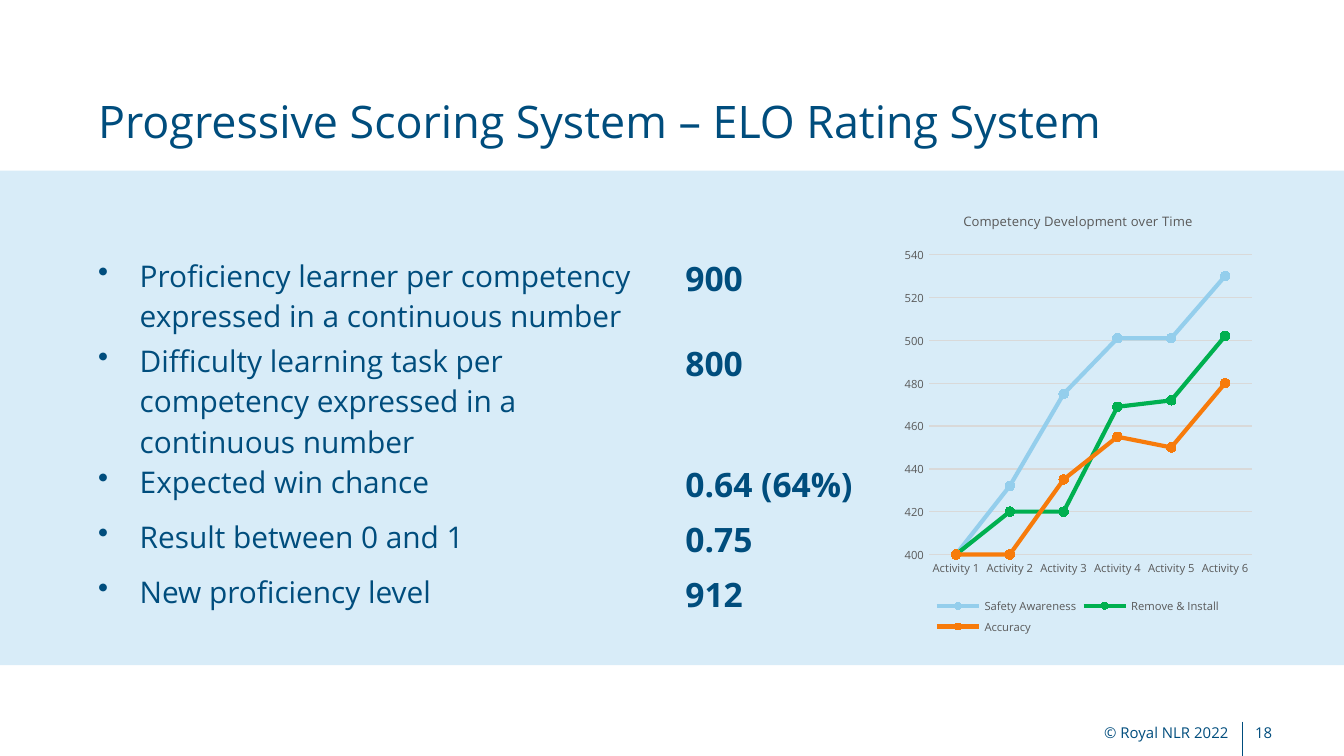
from dataclasses import dataclass

from lxml.etree import SubElement
from pptx import Presentation
from pptx.chart.data import CategoryChartData
from pptx.dml.color import RGBColor
from pptx.enum.chart import XL_CHART_TYPE as Chart, XL_LEGEND_POSITION as Legend
from pptx.enum.chart import XL_MARKER_STYLE as Marker, XL_TICK_MARK as Tick
from pptx.enum.shapes import MSO_CONNECTOR as Connector, MSO_SHAPE as Shape
from pptx.enum.text import MSO_ANCHOR as Anchor, MSO_AUTO_SIZE as AutoSize, PP_ALIGN as Align
from pptx.oxml import parse_xml
from pptx.oxml.ns import nsdecls, qn
from pptx.util import Emu, Pt


@dataclass(frozen=True)
class Theme:
    font: str = "Open Sans"
    navy: str = "004D7D"
    band: str = "D8ECF8"
    grey: str = "595959"
    grid: str = "D9D9D9"
    title: int = 24
    body: int = 16
    value: int = 18
    footer: int = 8
    chart_title: int = 7
    chart: int = 6


THEME = Theme()
PX_PER_INCH = 200
NO_TABLE_STYLE = "{2D5ABB26-0587-4C30-8999-92F81FD0307C}"

ROWS = [
    ("Proficiency learner per competency expressed in a continuous number", "900"),
    ("Difficulty learning task per competency expressed in a continuous number", "800"),
    ("Expected win chance", "0.64 (64%)"),
    ("Result between 0 and 1", "0.75"),
    ("New proficiency level", "912"),
]
SERIES = [
    ("Safety Awareness", "94CEEC", (400, 432, 475, 501, 501, 530)),
    ("Remove & Install", "00B050", (400, 420, 420, 469, 472, 502)),
    ("Accuracy", "F77B0B", (400, 400, 435, 455, 450, 480)),
]


def px(n):
    return Emu(n * 914400 // PX_PER_INCH)


def box(*lengths):
    return [px(n) for n in lengths]


def rgb(color):
    return RGBColor.from_string(color)


def set_font(font, size, color, bold=False):
    font.name, font.size, font.bold = THEME.font, Pt(size), bold
    font.color.rgb = rgb(color)


def write(tf, text, size, color=THEME.navy, bold=False, align=Align.LEFT, anchor=None, bullet=False):
    tf.word_wrap = True
    if anchor is not None:
        tf.vertical_anchor = anchor
    p = tf.paragraphs[0]
    p.alignment = align
    if bullet:
        pPr = p._p.get_or_add_pPr()
        pPr.set("marL", str(px(62)))
        pPr.set("indent", str(-px(62)))
        SubElement(pPr, qn("a:buChar")).set("char", "•")
    r = p.add_run()
    r.text = text
    set_font(r.font, size, color, bold)
    return r


def add_band(slide):
    sp = slide.shapes.add_shape(Shape.RECTANGLE, *box(0, 254, 2000, 736))
    sp.shadow.inherit = False
    sp.fill.solid()
    sp.fill.fore_color.rgb = rgb(THEME.band)
    sp.line.fill.background()


def add_divider(slide):
    line = slide.shapes.add_connector(Connector.STRAIGHT, *box(1848, 1074, 1848, 1125))
    line.line.color.rgb = rgb(THEME.navy)
    line.line.width = Pt(0.25)
    SubElement(line._element.spPr, qn("a:effectLst"))


def add_footer(slide, text, left, width, align):
    tb = slide.shapes.add_textbox(*box(left, 1060, width, 60))
    write(tb.text_frame, text, THEME.footer, align=align, anchor=Anchor.MIDDLE)


def set_title(slide, text):
    title = slide.shapes.title
    title.left, title.top, title.width, title.height = box(126, 130, 1770, 100)
    write(title.text_frame, text, THEME.title, anchor=Anchor.MIDDLE)
    title.text_frame.auto_size = AutoSize.NONE


def add_score_table(slide):
    frame = slide.shapes.add_table(len(ROWS), 2, *box(126, 370, 1174, 82 * len(ROWS)))
    table = frame.table
    table.first_row = table.horz_banding = False
    table._tbl.tblPr.find(qn("a:tableStyleId")).text = NO_TABLE_STYLE
    for column, width in zip(table.columns, (874, 300)):
        column.width = px(width)
    for i, (label, value) in enumerate(ROWS):
        for cell in table.rows[i].cells:
            cell.fill.background()
        write(table.cell(i, 0).text_frame, label, THEME.body, bullet=True)
        write(table.cell(i, 1).text_frame, value, THEME.value, bold=True)


def place_plot(chart, x, y, w, h):
    area = chart._chartSpace.chart.plotArea
    for old in area.findall(qn("c:layout")):
        area.remove(old)
    area.insert(0, parse_xml(
        f'<c:layout {nsdecls("c")}><c:manualLayout><c:layoutTarget val="inner"/>'
        f'<c:xMode val="edge"/><c:yMode val="edge"/><c:x val="{x}"/><c:y val="{y}"/>'
        f'<c:w val="{w}"/><c:h val="{h}"/></c:manualLayout></c:layout>'))


def style_axes(chart):
    for axis in (chart.category_axis, chart.value_axis):
        axis.major_tick_mark = axis.minor_tick_mark = Tick.NONE
        set_font(axis.tick_labels.font, THEME.chart, THEME.grey)
    values = chart.value_axis
    values.minimum_scale, values.maximum_scale, values.major_unit = 400, 540, 20
    values.format.line.fill.background()
    for line in (chart.category_axis.format.line, values.major_gridlines.format.line):
        line.color.rgb = rgb(THEME.grid)
        line.width = Pt(0.75)


def style_series(series, color):
    series.smooth = False
    series.format.line.color.rgb = rgb(color)
    series.format.line.width = Pt(2.25)
    series.marker.style = Marker.CIRCLE
    series.marker.size = 5
    series.marker.format.fill.solid()
    series.marker.format.fill.fore_color.rgb = rgb(color)
    series.marker.format.line.color.rgb = rgb(color)


def add_progress_chart(slide):
    data = CategoryChartData()
    data.categories = [f"Activity {n}" for n in range(1, 7)]
    for name, _, values in SERIES:
        data.add_series(name, values)
    chart = slide.shapes.add_chart(Chart.LINE_MARKERS, *box(1334, 286, 540, 666), data).chart
    set_font(chart.font, THEME.chart, THEME.grey)
    chart.has_title = True
    r = write(chart.chart_title.text_frame, "Competency Development over Time",
              THEME.chart_title, THEME.grey, align=Align.CENTER)
    r.font._element.set("spc", "20")
    chart.chart_title.include_in_layout = False
    chart.has_legend = True
    chart.legend.position = Legend.BOTTOM
    chart.legend.include_in_layout = False
    set_font(chart.legend.font, THEME.chart, THEME.grey)
    plot = chart.plots[0]
    plot.vary_by_categories = False
    for series, (_, color, _) in zip(plot.series, SERIES):
        style_series(series, color)
    style_axes(chart)
    place_plot(chart, 0.09, 0.14, 0.89, 0.67)


def main():
    prs = Presentation()
    prs.slide_width, prs.slide_height = box(2000, 1125)
    slide = prs.slides.add_slide(prs.slide_layouts[5])
    add_divider(slide)
    add_band(slide)
    add_footer(slide, "© Royal NLR 2022", 880, 968, Align.RIGHT)
    add_footer(slide, "18", 1848, 92, Align.LEFT)
    set_title(slide, "Progressive Scoring System – ELO Rating System")
    add_score_table(slide)
    add_progress_chart(slide)
    prs.save("out.pptx")


if __name__ == "__main__":
    main()
